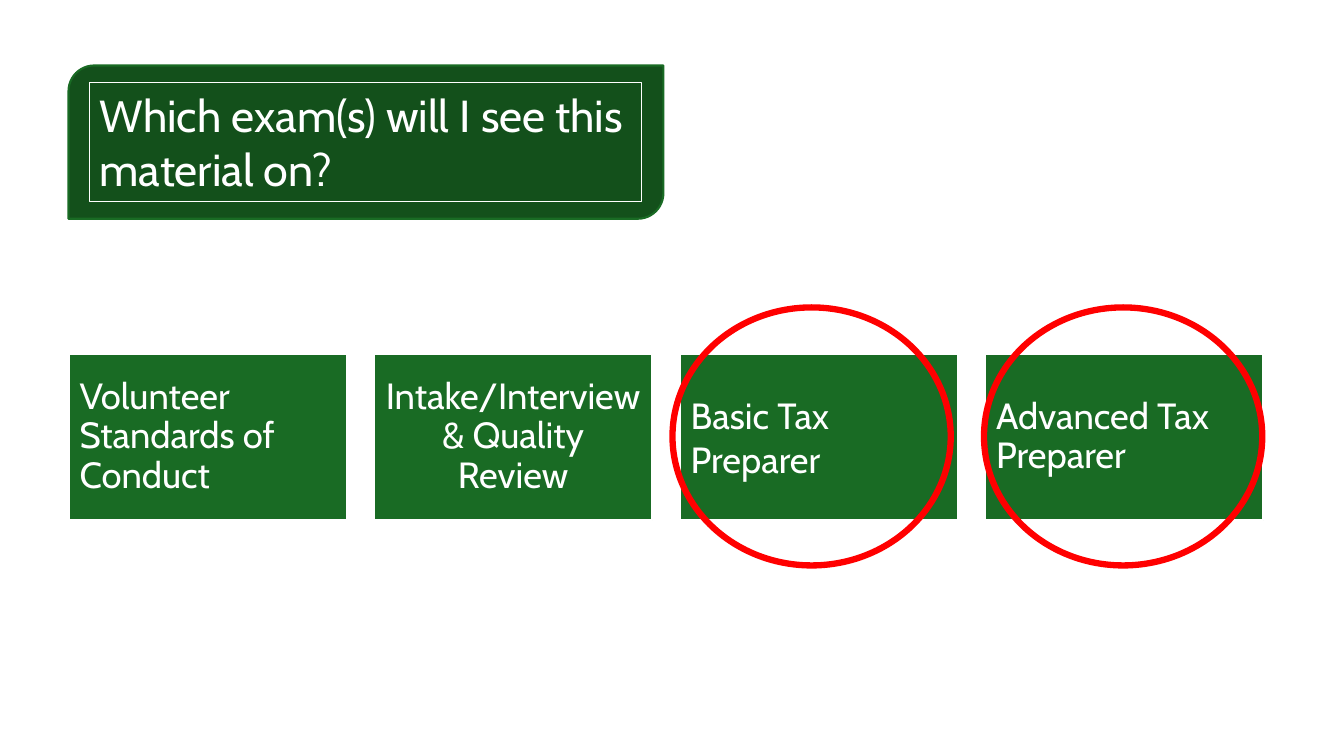
from pptx import Presentation
from pptx import util as u
from pptx.dml.color import RGBColor
from pptx.enum import shapes, text

PX = 9144  # 100 px to the inch
COLORS = {"dark": "13501B", "green": "196B24", "white": "FFFFFF", "red": "FF0000"}
FONT = "Cabin"
LEFT, ALIGN_CENTER = text.PP_ALIGN.LEFT, text.PP_ALIGN.CENTER
EXAMS = [
    ("Volunteer Standards of Conduct", LEFT, 0.9),
    ("Intake/Interview & Quality Review", ALIGN_CENTER, 0.9),
    ("Basic Tax Preparer", LEFT, 1.0),
    ("Advanced Tax Preparer", LEFT, 0.9),
]
EXAM_LEFT, EXAM_STEP = 68, 303
CIRCLE_LEFTS = (667, 976)


def color(name):
    return RGBColor.from_string(COLORS[name])


def add_box(page, kind, bounds, line, weight, fill=None):
    """Add a preset shape; bounds are left, top, width, height in px."""
    box = page.shapes.add_shape(kind, *(n * PX for n in bounds))
    box.shadow.inherit = False
    if fill:
        box.fill.solid()
        box.fill.fore_color.rgb = color(fill)
    else:
        box.fill.background()
    box.line.color.rgb = color(line)
    box.line.width = u.Pt(weight)
    return box


def write(box, words, *, size, align=LEFT, anchor=text.MSO_ANCHOR.MIDDLE,
          spacing=1.0, inset=(10, 5), autosize=text.MSO_AUTO_SIZE.NONE):
    """Put white text in a box; inset is the side and the top/bottom margin in px."""
    frame = box.text_frame
    frame.word_wrap = True
    frame.auto_size = autosize
    frame.vertical_anchor = anchor
    frame.margin_left = frame.margin_right = inset[0] * PX
    frame.margin_top = frame.margin_bottom = inset[1] * PX
    para = frame.paragraphs[0]
    para.alignment = align
    para.line_spacing = spacing
    span = para.add_run()
    span.text = words
    span.font.name = FONT
    span.font.size = u.Pt(size)
    span.font.color.rgb = color("white")


def add_exam(page, column, words, align, spacing):
    bounds = (EXAM_LEFT + column * EXAM_STEP, 351, 276, 165)
    box = add_box(page, shapes.MSO_SHAPE.RECTANGLE, bounds, "white", 1.5, "green")
    write(box, words, size=26, align=align, spacing=spacing, inset=(11, 11))


def add_title(page, words):
    add_box(page, shapes.MSO_SHAPE.ROUND_2_DIAG_RECTANGLE, (68, 65, 590, 152),
            "green", 1.5, "dark")
    frame = add_box(page, shapes.MSO_SHAPE.RECTANGLE, (89, 82, 547, 118), "white", 0.75)
    write(frame, words, size=32, anchor=text.MSO_ANCHOR.TOP,
          autosize=text.MSO_AUTO_SIZE.SHAPE_TO_FIT_TEXT)


def add_circle(page, left):
    add_box(page, shapes.MSO_SHAPE.OVAL, (left, 305, 276, 256), "red", 4.5)


def main():
    deck = Presentation()
    deck.slide_width, deck.slide_height = 1333 * PX, 750 * PX
    page = deck.slides.add_slide(deck.slide_layouts[6])
    for column, exam in enumerate(EXAMS):
        add_exam(page, column, *exam)
    add_title(page, "Which exam(s) will I see this material on?")
    for left in CIRCLE_LEFTS:
        add_circle(page, left)
    deck.save("out.pptx")


if __name__ == "__main__":
    main()
